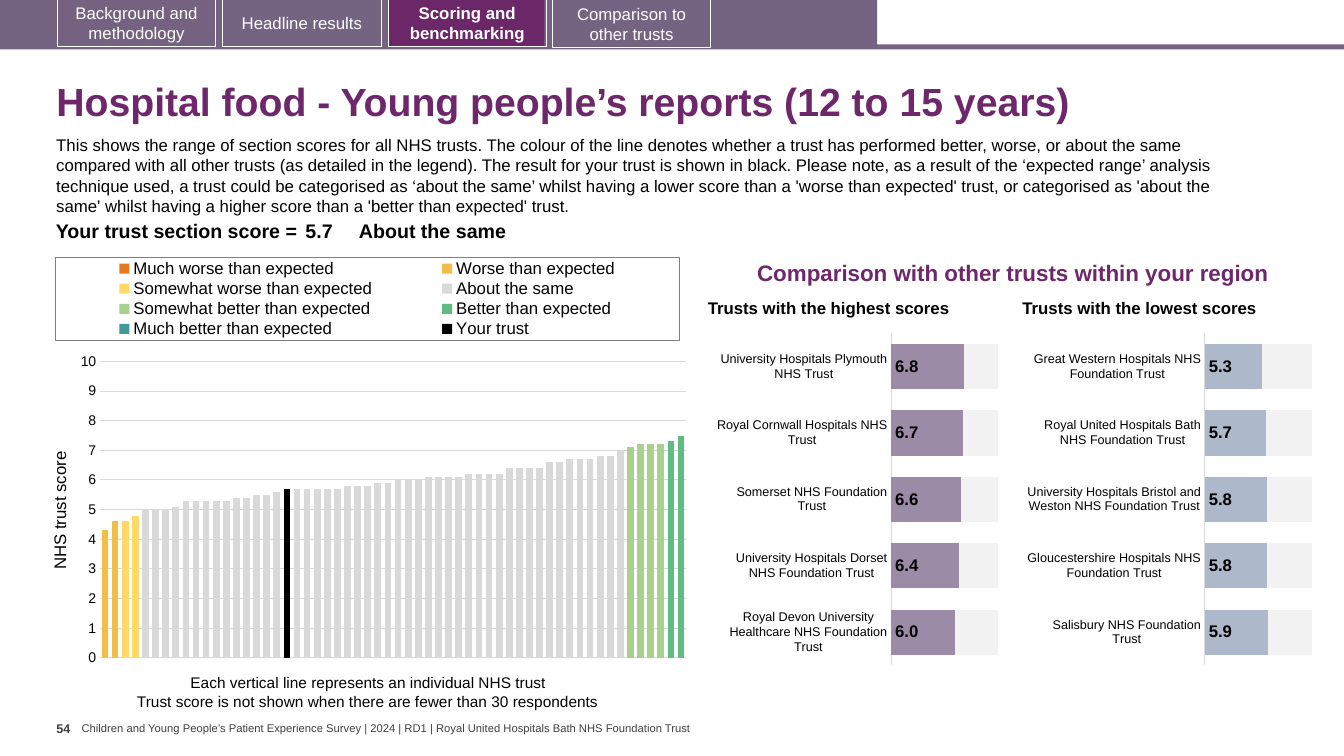
"""Build the hospital food section score slide."""
from copy import deepcopy
from dataclasses import dataclass
from typing import Any, Optional

from lxml.etree import SubElement
from pptx import Presentation
from pptx.chart.chart import Chart
from pptx.chart.data import CategoryChartData
from pptx.dml.color import RGBColor
from pptx.enum.chart import XL_CHART_TYPE, XL_LABEL_POSITION, XL_LEGEND_POSITION, XL_TICK_MARK
from pptx.enum.shapes import MSO_SHAPE
from pptx.enum.text import MSO_ANCHOR, MSO_AUTO_SIZE, PP_ALIGN
from pptx.oxml import parse_xml
from pptx.oxml.ns import nsdecls, qn
from pptx.slide import Slide
from pptx.util import Inches, Pt

BLACK = RGBColor(0x00, 0x00, 0x00)
WHITE = RGBColor(0xFF, 0xFF, 0xFF)
DARK_GREY = RGBColor(0x40, 0x40, 0x40)
GRID_GREY = RGBColor(0xD9, 0xD9, 0xD9)
REST_GREY = RGBColor(0xF2, 0xF2, 0xF2)
BANNER = RGBColor(0x75, 0x63, 0x82)
TAB = RGBColor(0x74, 0x62, 0x80)
ACTIVE_TAB = RGBColor(0x6B, 0x27, 0x68)
HEADING = RGBColor(0x6D, 0x27, 0x6A)
MAUVE = RGBColor(0x9C, 0x8B, 0xA7)
BLUE_GREY = RGBColor(0xAD, 0xB9, 0xCA)
Box = tuple[float, float, float, float]
MAX_SCORE = 10
TRUST_COUNT = 58


@dataclass(frozen=True)
class Block:
    box: Box
    fill: Optional[RGBColor]
    label: str = ""
    bold: bool = False


@dataclass(frozen=True)
class Caption:
    text: str
    box: Box
    size: float
    color: RGBColor = BLACK
    bold: bool = False
    anchor: MSO_ANCHOR = MSO_ANCHOR.TOP
    inset: float = 0
    wrap: bool = True
    spacing: float = 1


@dataclass(frozen=True)
class Band:
    name: str
    color: RGBColor
    first: int = 1
    scores: tuple[float, ...] = ()


@dataclass(frozen=True)
class Region:
    box: Box
    color: RGBColor
    scores: dict[str, float]


BLOCKS = [
    Block((0, 0.44, 13.33, 0.05), BANNER),
    Block((0, 0, 8.7, 0.47), BANNER),
    Block((3.86, 0, 1.54, 0.46), ACTIVE_TAB),
    Block((0.57, -0.01, 1.57, 0.47), TAB, "Background and methodology"),
    Block((2.21, -0.01, 1.57, 0.47), None, "Headline results"),
    Block((3.85, -0.01, 1.57, 0.47), None, "Scoring and benchmarking", True),
    Block((5.48, 0, 1.57, 0.47), BANNER, "Comparison to other trusts"),
]
CAPTIONS = [
    Caption("Children and Young People’s Patient Experience Survey | 2024 | RD1 | Royal United Hospitals Bath NHS Foundation Trust",
            (0.81, 7.16, 6.14, 0.13), 8, DARK_GREY, anchor=MSO_ANCHOR.MIDDLE, wrap=False),
    Caption("54", (0.56, 7.15, 0.25, 0.2), 9, DARK_GREY, True),
    Caption("This shows the range of section scores for all NHS trusts. The colour of the line denotes whether a trust "
            "has performed better, worse, or about the same compared with all other trusts (as detailed in the legend). "
            "The result for your trust is shown in black. Please note, as a result of the ‘expected range’ analysis "
            "technique used, a trust could be categorised as ‘about the same’ whilst having a lower score than a "
            "'worse than expected' trust, or categorised as 'about the same' whilst having a higher score than a "
            "'better than expected' trust.", (0.46, 1.29, 12.13, 0.91), 12, inset=0.1),
    Caption("Each vertical line represents an individual NHS trust", (1.79, 6.63, 3.75, 0.29), 11,
            inset=0.1, wrap=False),
    Caption("Trust score is not shown when there are fewer than 30 respondents", (1.26, 6.82, 4.81, 0.29), 11,
            inset=0.1, wrap=False),
    Caption("Comparison with other trusts within your region", (7.51, 2.33, 5.47, 0.51), 16, HEADING, True,
            MSO_ANCHOR.BOTTOM, spacing=0.9),
    Caption("Trusts with the highest scores", (7.02, 2.93, 2.86, 0.23), 12, BLACK, True, MSO_ANCHOR.BOTTOM, spacing=0.9),
    Caption("Trusts with the lowest scores", (10.14, 2.93, 2.79, 0.23), 12, BLACK, True, MSO_ANCHOR.BOTTOM, spacing=0.9),
]
BANDS = [
    Band("Much worse than expected", RGBColor(0xE8, 0x77, 0x22)),
    Band("Worse than expected", RGBColor(0xF1, 0xBE, 0x48), 1, (4.3, 4.6)),
    Band("Somewhat worse than expected", RGBColor(0xFF, 0xD9, 0x66), 3, (4.6, 4.8)),
    Band("About the same", GRID_GREY, 5, (
        5, 5, 5, 5.1, 5.3, 5.3, 5.3, 5.3, 5.3, 5.4, 5.4, 5.5, 5.5, 5.6, 5.7, 5.7, 5.7, 5.7, 5.7, 5.7, 5.8, 5.8, 5.8, 5.9,
        5.9, 6, 6, 6, 6.1, 6.1, 6.1, 6.1, 6.2, 6.2, 6.2, 6.2, 6.4, 6.4, 6.4, 6.4, 6.6, 6.6, 6.7, 6.7, 6.7, 6.8, 6.8, 7)),
    Band("Somewhat better than expected", RGBColor(0xA9, 0xD1, 0x8E), 53, (7.1, 7.2, 7.2, 7.2)),
    Band("Better than expected", RGBColor(0x5F, 0xBD, 0x83), 57, (7.3, 7.5)),
    Band("Much better than expected", RGBColor(0x41, 0x99, 0x99)),
    Band("Your trust", BLACK, 19, (5.7,)),
]
REGIONS = [
    Region((10.19, 3.24, 2.89, 3.43), BLUE_GREY, {
        "Great Western Hospitals NHS Foundation Trust": 5.3,
        "Royal United Hospitals Bath NHS Foundation Trust": 5.7,
        "University Hospitals Bristol and Weston NHS Foundation Trust": 5.8,
        "Gloucestershire Hospitals NHS Foundation Trust": 5.8,
        "Salisbury NHS Foundation Trust": 5.9}),
    Region((7.1, 3.24, 2.86, 3.43), MAUVE, {
        "University Hospitals Plymouth NHS Trust": 6.8,
        "Royal Cornwall Hospitals NHS Trust": 6.7,
        "Somerset NHS Foundation Trust": 6.6,
        "University Hospitals Dorset NHS Foundation Trust": 6.4,
        "Royal Devon University Healthcare NHS Foundation Trust": 6}),
]


def assign(target: Any, formats: dict[str, Any]) -> None:
    for key, value in formats.items():
        setattr(target, key, value)


def style_font(font: Any, size: float, color: RGBColor = BLACK, bold: bool = False) -> None:
    assign(font, {"name": "Arial", "size": Pt(size), "bold": bold})
    font.color.rgb = color


def inches(box: Box) -> list[Inches]:
    return [Inches(length) for length in box]


def draw_block(slide: Slide, block: Block) -> None:
    shape = slide.shapes.add_shape(MSO_SHAPE.RECTANGLE, *inches(block.box))
    shape.shadow.inherit = False
    if block.fill is None:
        shape.fill.background()
    else:
        shape.fill.solid()
        shape.fill.fore_color.rgb = block.fill
    if not block.label:
        shape.line.fill.background()
        return
    shape.line.color.rgb = WHITE
    shape.line.width = Pt(0.75)
    assign(shape.text_frame, {"text": block.label, "word_wrap": True, "vertical_anchor": MSO_ANCHOR.MIDDLE})
    paragraph = shape.text_frame.paragraphs[0]
    paragraph.alignment = PP_ALIGN.CENTER
    style_font(paragraph.font, 12, WHITE, block.bold)


def draw_caption(slide: Slide, caption: Caption) -> None:
    frame = slide.shapes.add_textbox(*inches(caption.box)).text_frame
    side, edge = Inches(caption.inset), Inches(caption.inset / 2)
    assign(frame, {"text": caption.text, "word_wrap": caption.wrap, "vertical_anchor": caption.anchor,
                   "margin_left": side, "margin_right": side, "margin_top": edge, "margin_bottom": edge})
    paragraph = frame.paragraphs[0]
    paragraph.line_spacing = caption.spacing
    style_font(paragraph.font, caption.size, caption.color, caption.bold)


def draw_title(slide: Slide) -> None:
    title = slide.shapes.title
    assign(title, dict(zip(("left", "top", "width", "height"), inches((0.46, 0.67, 12.49, 0.72)))))
    assign(title.text_frame, {"text": "Hospital food - Young people’s reports (12 to 15 years)", "word_wrap": True,
                              "auto_size": MSO_AUTO_SIZE.NONE, "vertical_anchor": MSO_ANCHOR.MIDDLE})
    paragraph = title.text_frame.paragraphs[0]
    assign(paragraph, {"alignment": PP_ALIGN.LEFT, "line_spacing": 0.9})
    style_font(paragraph.font, 28, HEADING, True)


def draw_score(slide: Slide) -> None:
    table = slide.shapes.add_table(1, 3, *inches((0.36, 2.15, 11.69, 0.31))).table
    assign(table, {"first_row": False, "horz_banding": False})
    columns = [("Your trust section score =", 2.63, 0.04, PP_ALIGN.RIGHT),
               ("5.7", 0.57, 0.04, PP_ALIGN.LEFT), ("About the same", 8.49, 0, PP_ALIGN.LEFT)]
    for index, (text, width, side, alignment) in enumerate(columns):
        table.columns[index].width = Inches(width)
        cell = table.cell(0, index)
        cell.fill.background()
        assign(cell, {"text": text, "margin_left": Inches(side), "margin_right": Inches(side),
                      "margin_top": Inches(0.04), "margin_bottom": Inches(0.04)})
        paragraph = cell.text_frame.paragraphs[0]
        paragraph.alignment = alignment
        style_font(paragraph.font, 14, BLACK, True)


def set_layout(parent: Any, index: int, **fractions: float) -> None:
    for old in parent.findall(qn("c:layout")):
        parent.remove(old)
    layout = parse_xml(f"<c:layout {nsdecls('c')}><c:manualLayout/></c:layout>")
    parent.insert(index, layout)
    settings = {"layoutTarget": "inner"} if index == 0 else {}
    settings |= {"xMode": "edge", "yMode": "edge"} | fractions
    for tag, value in settings.items():
        SubElement(layout[0], qn(f"c:{tag}")).set("val", str(value))


def move_last_to_right_axis(plot_area: Any) -> None:
    bars, category, value = (plot_area.find(qn(f"c:{tag}")) for tag in ("barChart", "catAx", "valAx"))
    right_bars, right_category, right_value = map(deepcopy, (bars, category, value))
    bars.remove(bars.findall(qn("c:ser"))[-1])
    for series in right_bars.findall(qn("c:ser"))[:-1]:
        right_bars.remove(series)
    right_ids = {category.find(qn("c:axId")).get("val"): "5001", value.find(qn("c:axId")).get("val"): "5002"}
    for part in (right_bars, right_category, right_value):
        for reference in part.xpath("./c:axId | ./c:crossAx"):
            reference.set("val", right_ids[reference.get("val")])
    for gridlines in right_value.findall(qn("c:majorGridlines")):
        right_value.remove(gridlines)
    for tag, setting in {"axPos": "r", "tickLblPos": "none", "crosses": "max"}.items():
        right_value.find(qn(f"c:{tag}")).set("val", setting)
    bars.addnext(right_bars)
    value.addnext(right_value)
    right_value.addnext(right_category)


def add_scores(slide: Slide, kind: XL_CHART_TYPE, box: Box, data: CategoryChartData,
               colors: list[RGBColor], gap: int) -> Chart:
    chart = slide.shapes.add_chart(kind, *inches(box), data).chart
    assign(chart, {"has_title": False, "has_legend": False})
    style_font(chart.font, 10)
    plot = chart.plots[0]
    assign(plot, {"gap_width": gap, "overlap": 100, "vary_by_categories": False})
    assign(chart.value_axis, {"minimum_scale": 0, "maximum_scale": MAX_SCORE, "major_unit": 1})
    for series, color in zip(plot.series, colors):
        series.format.fill.solid()
        series.format.fill.fore_color.rgb = color
    return chart


def draw_national(slide: Slide) -> None:
    data = CategoryChartData()
    data.categories = [str(rank) for rank in range(1, TRUST_COUNT + 1)]
    for band in BANDS:
        scores = dict(enumerate(band.scores, band.first))
        data.add_series(band.name, [scores.get(rank) for rank in range(1, TRUST_COUNT + 1)])
    chart = add_scores(slide, XL_CHART_TYPE.COLUMN_CLUSTERED, (0.46, 2.47, 6.41, 4.21), data,
                       [band.color for band in BANDS], 50)
    chart.category_axis.visible = False
    axis = chart.value_axis
    assign(axis, {"major_tick_mark": XL_TICK_MARK.NONE, "has_major_gridlines": True})
    axis.format.line.fill.background()
    style_font(axis.tick_labels.font, 10)
    space = chart._chartSpace
    plot_area = space.xpath(".//c:plotArea")[0]
    move_last_to_right_axis(plot_area)
    axis.major_gridlines.format.line.color.rgb = GRID_GREY
    axis.major_gridlines.format.line.width = Pt(0.75)
    axis.axis_title.text_frame.text = "NHS trust score"
    style_font(axis.axis_title.text_frame.paragraphs[0].runs[0].font, 12)
    chart.has_legend = True
    assign(chart.legend, {"position": XL_LEGEND_POSITION.TOP, "include_in_layout": False})
    style_font(chart.legend.font, 12)

    heading = space.xpath(".//c:valAx/c:title")[0]
    rotation = heading.xpath(".//a:bodyPr")[0]
    rotation.set("rot", "-5400000")
    rotation.set("vert", "horz")
    set_layout(heading, 1, x=0, y=0.47)
    set_layout(plot_area, 0, x=0.083, y=0.265, w=0.907, h=0.699)
    legend = space.xpath(".//c:legend")[0]
    set_layout(legend, 1, x=0.014, y=0.02, w=0.965, h=0.195)
    legend.find(qn("c:txPr")).addprevious(parse_xml(
        f'<c:spPr {nsdecls("c", "a")}><a:ln w="9525"><a:solidFill><a:srgbClr val="7F7F7F"/></a:solidFill></a:ln></c:spPr>'))


def draw_region(slide: Slide, region: Region) -> None:
    data = CategoryChartData(number_format="0.0")
    data.categories = list(region.scores)
    data.add_series("Series 1", region.scores.values())
    data.add_series("Series 2", [round(MAX_SCORE - score, 1) for score in region.scores.values()])
    chart = add_scores(slide, XL_CHART_TYPE.BAR_STACKED, region.box, data, [region.color, REST_GREY], 47)
    assign(chart.value_axis, {"visible": False, "has_major_gridlines": False})
    axis = chart.category_axis
    assign(axis, {"reverse_order": True, "major_tick_mark": XL_TICK_MARK.NONE})
    axis.format.line.color.rgb = GRID_GREY
    axis.format.line.width = Pt(0.75)
    style_font(axis.tick_labels.font, 9)
    labels = chart.plots[0].series[0].data_labels
    assign(labels, {"show_value": True, "position": XL_LABEL_POSITION.INSIDE_BASE,
                    "number_format": "0.0", "number_format_is_linked": False})
    style_font(labels.font, 12, BLACK, True)
    set_layout(chart._chartSpace.xpath(".//c:plotArea")[0], 0, x=0.608, y=0.02, w=0.37, h=0.96)


def main() -> None:
    deck = Presentation()
    assign(deck, {"slide_width": Inches(13.33), "slide_height": Inches(7.5)})
    slide = deck.slides.add_slide(deck.slide_layouts[5])
    for block in BLOCKS:
        draw_block(slide, block)
    draw_title(slide)
    for caption in CAPTIONS:
        draw_caption(slide, caption)
    draw_score(slide)
    draw_national(slide)
    for region in REGIONS:
        draw_region(slide, region)
    deck.save("out.pptx")


if __name__ == "__main__":
    main()
